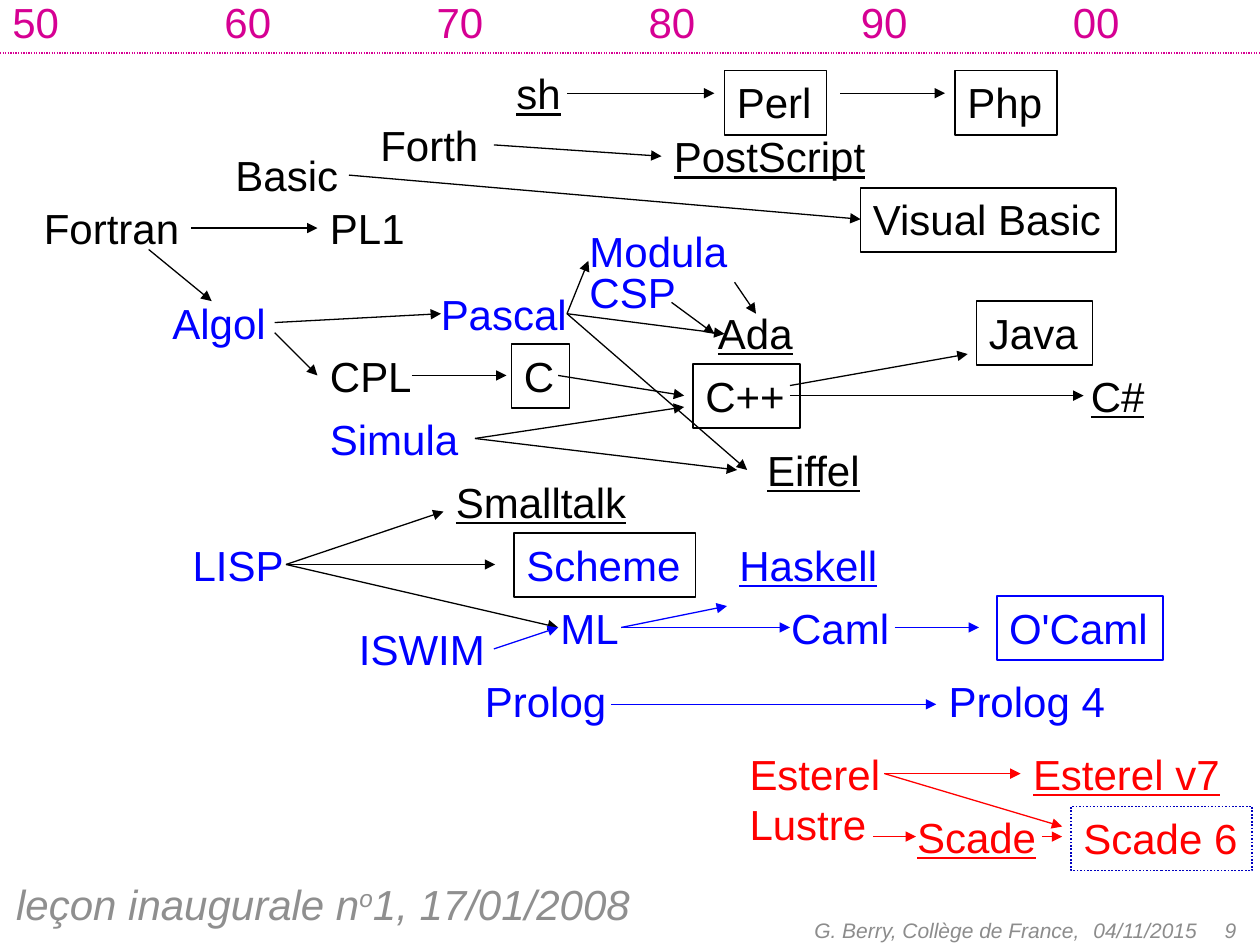
from lxml import etree
from pptx import Presentation, util as u
from pptx.dml.color import RGBColor
from pptx.enum import dml, shapes, text
from pptx.oxml.ns import qn

BLACK, BLUE, RED = "000000", "0000FF", "FF0000"
MAGENTA, NAVY, GREY, DARK_GREY = "D60093", "0000BF", "8C8C8C", "8F8F8F"
FONT = "Arial"
LABEL_HEIGHT = 0.5
BOX_HEIGHT = 0.51

# Text, left, top, width of each language, by colour
PLAIN = {
    BLACK: [
        ("Forth", 2.92, 0.9, 0.98), ("Basic", 1.77, 1.14, 1.02),
        ("Fortran", 0.25, 1.56, 1.37), ("PL1", 2.52, 1.56, 0.89),
        ("CPL", 2.52, 2.73, 0.85),
    ],
    BLUE: [
        ("Algol", 1.27, 2.31, 0.96), ("Pascal", 3.4, 2.24, 1.2),
        ("Modula", 4.58, 1.74, 1.3), ("CSP", 4.58, 2.07, 0.89),
        ("Simula", 2.52, 3.23, 1.22), ("LISP", 1.43, 4.23, 0.92),
        ("ISWIM", 2.75, 4.9, 1.21), ("ML", 4.35, 4.73, 0.66),
        ("Caml", 6.18, 4.73, 0.98), ("Prolog", 3.75, 5.31, 1.17),
        ("Prolog 4", 7.43, 5.31, 1.44),
    ],
}
UNDERLINED = {
    BLACK: [
        ("sh", 4, 0.49, 0.55), ("PostScript", 5.25, 0.99, 1.72),
        ("Ada", 5.6, 2.39, 0.8), ("C#", 8.56, 2.89, 0.63),
        ("Eiffel", 5.99, 3.48, 0.94), ("Smalltalk", 3.52, 3.73, 1.56),
    ],
    BLUE: [("Haskell", 5.77, 4.23, 1.3)],
    RED: [("Scade", 7.18, 6.39, 1.15), ("Esterel v7", 8.1, 5.89, 1.68)],
}
# Text, left, top, width, text colour, line colour
BOXED = [
    ("Perl", 5.75, 0.56, 0.81, BLACK, BLACK),
    ("Php", 7.58, 0.56, 0.81, BLACK, BLACK),
    ("Visual Basic", 6.83, 1.49, 2.03, BLACK, BLACK),
    ("Java", 7.75, 2.39, 0.92, BLACK, BLACK),
    ("C", 4.06, 2.73, 0.46, BLACK, BLACK),
    ("C++", 5.5, 2.89, 0.85, BLACK, BLACK),
    ("Scheme", 4.08, 4.23, 1.44, BLUE, BLACK),
    ("O'Caml", 7.91, 4.73, 1.32, BLUE, BLUE),
    ("Scade 6", 8.5, 6.4, 1.44, RED, NAVY),
]
# Start of the arrows -> their ends, by colour
ARROWS = {
    BLACK: {
        (4.5, 0.74): [(5.67, 0.74)],
        (6.67, 0.74): [(7.5, 0.74)],
        (3.92, 1.15): [(5.25, 1.24)],
        (2.77, 1.39): [(6.83, 1.74)],
        (1.18, 1.98): [(1.68, 2.39)],
        (1.52, 1.81): [(2.52, 1.81)],
        (2.18, 2.56): [(3.5, 2.49)],
        (2.18, 2.64): [(2.52, 2.98)],
        (3.27, 2.98): [(4.02, 2.98)],
        (4.5, 2.49): [(4.67, 2.07), (5.75, 2.65), (5.93, 3.73)],
        (5.83, 2.24): [(6, 2.49)],
        (5.33, 2.4): [(5.67, 2.65)],
        (3.77, 3.48): [(5.43, 3.23), (5.85, 3.73)],
        (4.43, 2.98): [(5.43, 3.14)],
        (6.27, 3.14): [(8.6, 3.14)],
        (6.27, 3.06): [(7.68, 2.81)],
        (2.27, 4.48): [(3.52, 4.06), (3.93, 4.48), (4.43, 4.98)],
    },
    BLUE: {
        (3.92, 5.15): [(4.43, 4.98)],
        (4.93, 4.98): [(5.77, 4.81), (6.27, 4.98)],
        (7.1, 4.98): [(7.77, 4.98)],
        (4.85, 5.59): [(7.43, 5.59)],
    },
    RED: {
        (7.02, 6.14): [(8.1, 6.14), (8.43, 6.56)],
        (6.93, 6.64): [(7.27, 6.64)],
        (8.27, 6.64): [(8.43, 6.64)],
    },
}


def length(inches):
    return u.Cm(inches * 2.54)


def colour(value):
    return RGBColor.from_string(value)


def add_run(paragraph, words, ink, size=24, underline=None, italic=None):
    run = paragraph.add_run()
    run.text = words
    font = run.font
    font.name, font.size = FONT, u.Pt(size)
    font.underline, font.italic = underline, italic
    font.color.rgb = colour(ink)
    return run


def fit_to_text(shape):
    shape.text_frame.word_wrap = False
    shape.text_frame.auto_size = text.MSO_AUTO_SIZE.SHAPE_TO_FIT_TEXT


def add_label(slide, box, lines, ink, underline=None):
    label = slide.shapes.add_textbox(*map(length, box))
    fit_to_text(label)
    frame = label.text_frame
    for index, line in enumerate(lines):
        paragraph = frame.add_paragraph() if index else frame.paragraphs[0]
        add_run(paragraph, line, ink, underline=underline)


def add_boxed_label(slide, box, words, ink, outline):
    shape = slide.shapes.add_shape(shapes.MSO_SHAPE.RECTANGLE, *map(length, box))
    shape.shadow.inherit = False
    shape.fill.background()
    shape.line.color.rgb = colour(outline)
    shape.line.width = u.Pt(1)
    if outline == NAVY:
        shape.line.dash_style = dml.MSO_LINE.ROUND_DOT
    fit_to_text(shape)
    shape.text_frame.vertical_anchor = text.MSO_ANCHOR.TOP
    paragraph = shape.text_frame.paragraphs[0]
    paragraph.alignment = text.PP_ALIGN.LEFT
    add_run(paragraph, words, ink)


def add_line(slide, start, end, ink):
    line = slide.shapes.add_connector(
        shapes.MSO_CONNECTOR.STRAIGHT, *map(length, start + end))
    line.line.color.rgb = colour(ink)
    line.line.width = u.Pt(0.75)
    etree.SubElement(line._element.spPr, qn("a:effectLst"))
    return line


def add_arrow(slide, start, end, ink):
    arrow = add_line(slide, start, end, ink)
    etree.SubElement(arrow.line._get_or_add_ln(), qn("a:tailEnd"), type="triangle")


def add_timeline(slide, left, top, width):
    decade_width = width * 1.01 / 6
    for index, decade in enumerate(["50", "60", "70", "80", "90", "00"]):
        box = (left + index * decade_width, top, 0.57, LABEL_HEIGHT)
        add_label(slide, box, [decade], MAGENTA)
    rule = add_line(slide, (left, top + 0.5), (left + width, top + 0.5), MAGENTA)
    rule.line.dash_style = dml.MSO_LINE.ROUND_DOT


def add_family_tree(slide, left, top):
    for groups, underline in ((PLAIN, None), (UNDERLINED, True)):
        for ink, languages in groups.items():
            for name, x, y, width in languages:
                box = (left + x, top + y, width, LABEL_HEIGHT)
                add_label(slide, box, [name], ink, underline)
    add_label(slide, (left + 5.85, top + 5.89, 1.25, 0.91), ["Esterel", "Lustre"], RED)
    for name, x, y, width, ink, outline in BOXED:
        add_boxed_label(slide, (left + x, top + y, width, BOX_HEIGHT), name, ink, outline)
    for ink, arrows in ARROWS.items():
        for (x, y), ends in arrows.items():
            for end_x, end_y in ends:
                add_arrow(slide, (left + x, top + y), (left + end_x, top + end_y), ink)


def add_lecture_caption(slide, left, top):
    caption = slide.shapes.add_textbox(*map(length, (left, top, 5.28, 0.95)))
    fit_to_text(caption)
    paragraph = caption.text_frame.paragraphs[0]
    paragraph.line_spacing = 1.05
    add_run(paragraph, "leçon inaugurale n", DARK_GREY, italic=True)
    ordinal = add_run(paragraph, "o", DARK_GREY, italic=True)
    ordinal._r.get_or_add_rPr().set("baseline", "30000")
    add_run(paragraph, "1, 17/01/2008", DARK_GREY, italic=True)


def add_footer(slide, left, top):
    right, start = text.PP_ALIGN.RIGHT, text.PP_ALIGN.LEFT
    for words, x, width, alignment in (
        ("G. Berry, Collège de France,", 0, 3.17, right),
        ("04/11/2015", 3.08, 2.33, start),
        ("9", 2.08, 2.33, right),
    ):
        box = slide.shapes.add_textbox(*map(length, (left + x, top, width, 0.4)))
        box.text_frame.word_wrap = True
        box.text_frame.vertical_anchor = text.MSO_ANCHOR.MIDDLE
        paragraph = box.text_frame.paragraphs[0]
        paragraph.alignment = alignment
        add_run(paragraph, words, GREY, size=12, italic=True)


def main():
    presentation = Presentation()
    presentation.slide_width, presentation.slide_height = length(10), length(7.5)
    slide = presentation.slides.add_slide(presentation.slide_layouts[6])
    add_footer(slide, 5.5, 7.18)
    add_timeline(slide, 0, -0.08, 10)
    add_family_tree(slide, 0, 0)
    add_lecture_caption(slide, 0.03, 6.9)
    presentation.save("out.pptx")


if __name__ == "__main__":
    main()
